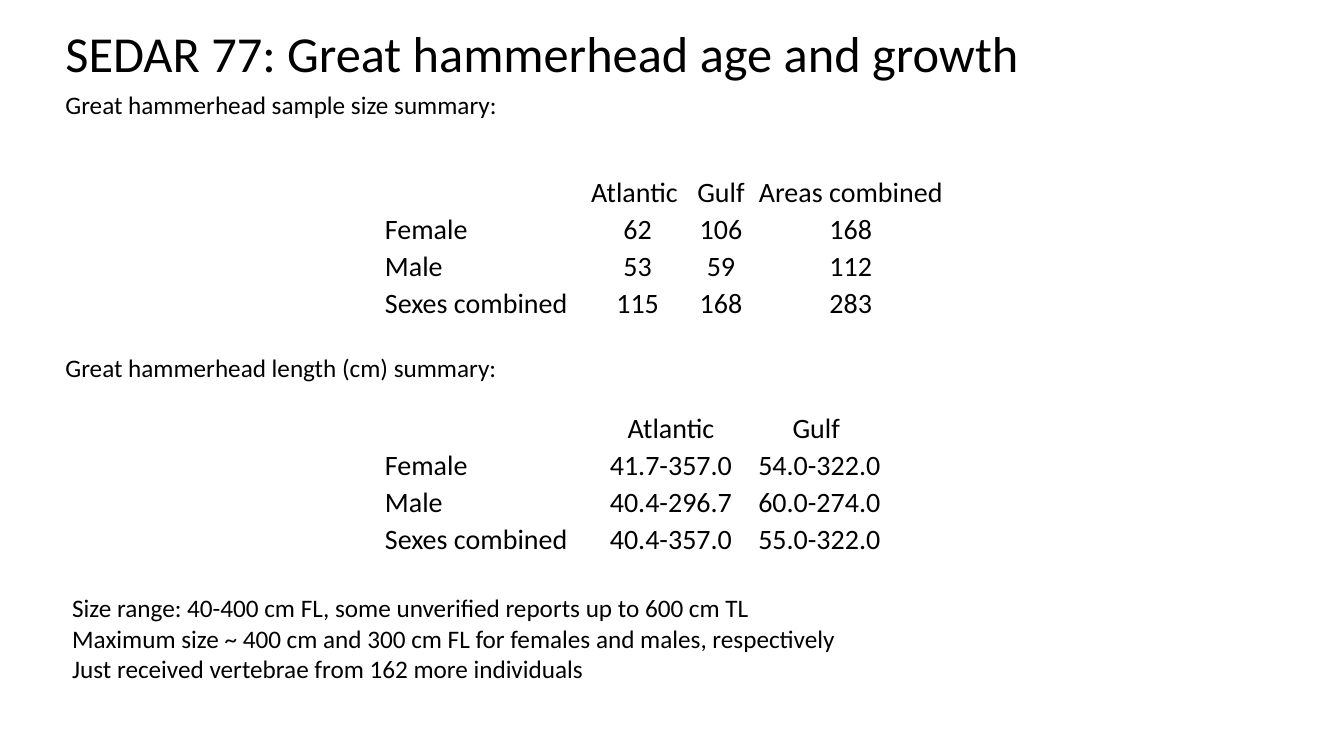
from dataclasses import dataclass

from pptx import Presentation, util as u
from pptx.dml.color import RGBColor
from pptx.enum import text
from pptx.slide import Slide
from pptx.text.text import TextFrame

FONT = "Calibri"
BLACK = "000000"
TABLE_LEFT = 9.68
ROW_HEIGHT = 0.93
CELL_SIZE = 20


@dataclass
class TextBlock:
    left: float
    top: float
    width: float
    height: float
    size: int
    content: str
    wrap: bool = False


@dataclass
class SummaryTable:
    top: float
    column_widths: list[float]
    rows: list[list[str]]


TEXT_BLOCKS = [
    TextBlock(1.4, 0.43, 25.04, 1.8, 36, "SEDAR 77: Great hammerhead age and growth"),
    TextBlock(1.4, 2.13, 11.51, 1.02, 18, "Great hammerhead sample size summary:"),
    TextBlock(1.4, 8.76, 11.51, 1.02, 18, "Great hammerhead length (cm) summary:"),
    TextBlock(
        1.57, 14.81, 30.73, 4.11, 18,
        "Size range: 40-400 cm FL, some unverified reports up to 600 cm TL\n"
        "Maximum size ~ 400 cm and 300 cm FL for females and males, respectively\n"
        "Just received vertebrae from 162 more individuals",
        wrap=True,
    ),
]

SUMMARY_TABLES = [
    SummaryTable(4.37, [5.03, 2.72, 1.48, 5.06], [
        ["", "Atlantic ", "Gulf", "Areas combined"],
        ["Female", "62", "106", "168"],
        ["Male", "53", "59", "112"],
        ["Sexes combined", "115", "168", "283"],
    ]),
    SummaryTable(10.31, [5.36, 3.74, 3.74], [
        ["", "Atlantic", "Gulf "],
        ["Female", "41.7-357.0", "54.0-322.0"],
        ["Male", "40.4-296.7", "60.0-274.0"],
        ["Sexes combined", "40.4-357.0", "55.0-322.0"],
    ]),
]


def color(value: str) -> RGBColor:
    return RGBColor.from_string(value)


def format_runs(text_frame: TextFrame, size: int) -> None:
    for paragraph in text_frame.paragraphs:
        for run in paragraph.runs:
            run.font.name = FONT
            run.font.size = u.Pt(size)
            run.font.bold = False
            run.font.color.rgb = color(BLACK)


def draw_text(slide: Slide, block: TextBlock) -> None:
    shape = slide.shapes.add_textbox(
        u.Cm(block.left), u.Cm(block.top), u.Cm(block.width), u.Cm(block.height)
    )
    text_frame = shape.text_frame
    text_frame.word_wrap = block.wrap
    text_frame.text = block.content
    format_runs(text_frame, block.size)


def draw_table(slide: Slide, summary: SummaryTable) -> None:
    row_count = len(summary.rows)
    table = slide.shapes.add_table(
        row_count, len(summary.column_widths),
        u.Cm(TABLE_LEFT), u.Cm(summary.top),
        u.Cm(sum(summary.column_widths)), u.Cm(ROW_HEIGHT * row_count),
    ).table
    table.first_row = False
    table.horz_banding = False
    for column, width in zip(table.columns, summary.column_widths):
        column.width = u.Cm(width)
    for row, values in zip(table.rows, summary.rows):
        row.height = u.Cm(ROW_HEIGHT)
        for index, (cell, value) in enumerate(zip(row.cells, values)):
            cell.fill.background()
            cell.margin_left = cell.margin_right = cell.margin_top = u.Cm(0.02)
            cell.margin_bottom = 0
            cell.vertical_anchor = text.MSO_ANCHOR.BOTTOM
            cell.text_frame.text = value
            if index > 0:
                cell.text_frame.paragraphs[0].alignment = text.PP_ALIGN.CENTER
            format_runs(cell.text_frame, CELL_SIZE)


def main() -> None:
    presentation = Presentation()
    presentation.slide_width = u.Cm(33.87)
    presentation.slide_height = u.Cm(19.05)
    slide = presentation.slides.add_slide(presentation.slide_layouts[6])
    for block in TEXT_BLOCKS:
        draw_text(slide, block)
    for summary in SUMMARY_TABLES:
        draw_table(slide, summary)
    presentation.save("out.pptx")


if __name__ == "__main__":
    main()
